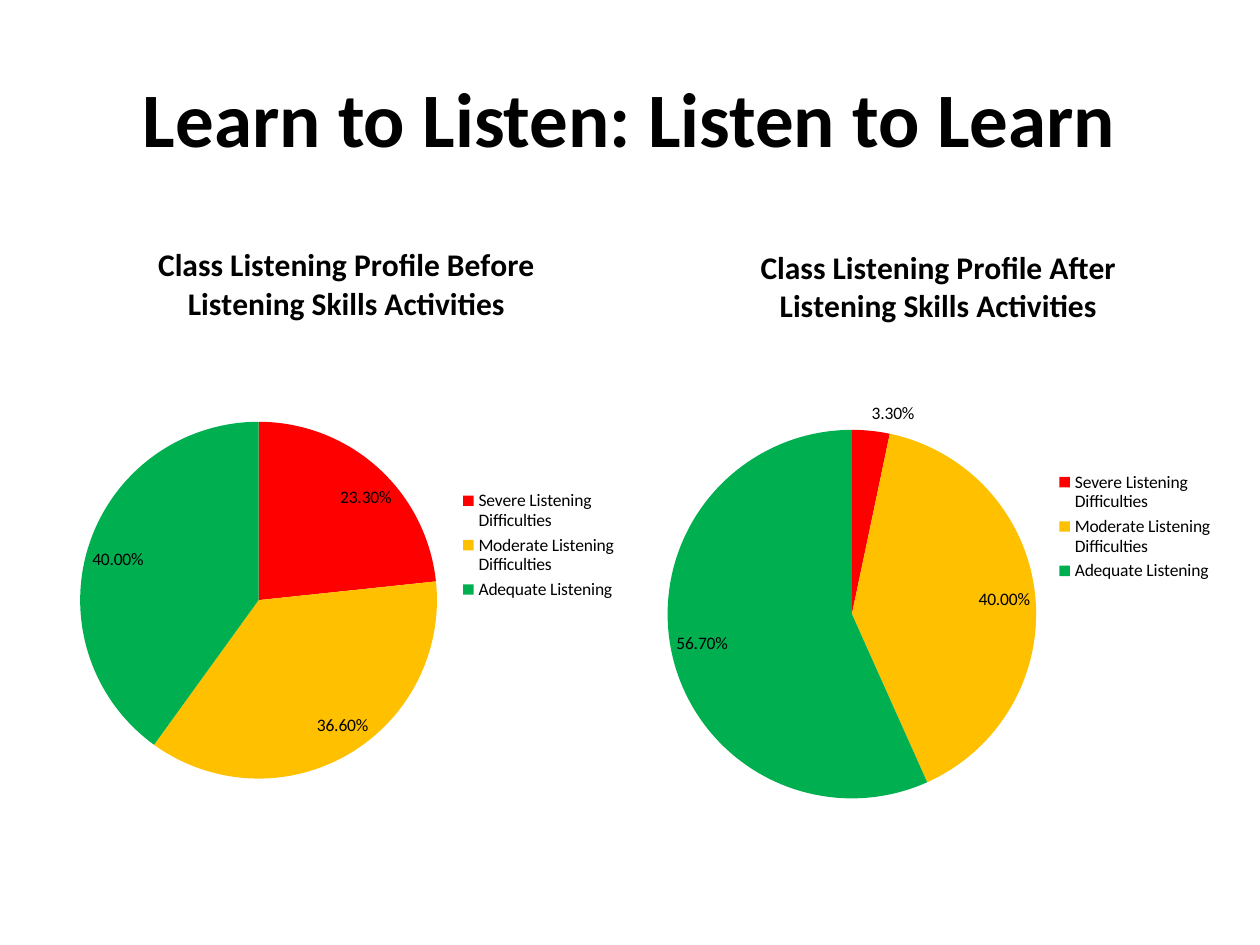
from lxml import etree
from pptx import Presentation
from pptx.chart.data import CategoryChartData
from pptx.dml.color import RGBColor
from pptx.enum.chart import XL_CHART_TYPE, XL_LABEL_POSITION, XL_LEGEND_POSITION
from pptx.enum.text import MSO_ANCHOR, PP_ALIGN
from pptx.oxml import parse_xml
from pptx.oxml.ns import nsdecls, qn
from pptx.util import Cm, Pt

PIE = XL_CHART_TYPE.PIE
BEST_FIT = XL_LABEL_POSITION.BEST_FIT
RIGHT = XL_LEGEND_POSITION.RIGHT
CENTER = PP_ALIGN.CENTER
MIDDLE = MSO_ANCHOR.MIDDLE

BLACK = RGBColor(0x00, 0x00, 0x00)
RED = RGBColor(0xFF, 0x00, 0x00)
AMBER = RGBColor(0xFF, 0xC0, 0x00)
GREEN = RGBColor(0x00, 0xB0, 0x50)
FONT = "Calibri"

# Content
TITLE = "Learn to Listen: Listen to Learn"
LEVELS = [
    ("Severe Listening Difficulties", RED),
    ("Moderate Listening Difficulties", AMBER),
    ("Adequate Listening", GREEN),
]
# box: left, top, width, height in cm; pie: x, y, w, h as shares of the box
PROFILES = [
    {"title": ["Class Listening Profile Before", "Listening Skills Activities"],
     "values": (0.233, 0.366, 0.4),
     "box": (1.27, 4.45, 11.43, 13.08), "pie": (0.03, 0.31, 0.63, 0.55)},
    {"title": ["Class Listening Profile After", "Listening Skills Activities"],
     "values": (0.033, 0.4, 0.567),
     "box": (13.11, 4.52, 11.61, 12.19), "pie": (0.03, 0.34, 0.64, 0.61)},
]


def style(font, size, bold):
    font.name = FONT
    font.size = Pt(size)
    font.bold = bold
    font.color.rgb = BLACK


def place_pie(chart, shares):
    """Fix the inner plot area at the given shares of the chart."""
    plot_area = chart.element.find(".//" + qn("c:plotArea"))
    for old in plot_area.findall(qn("c:layout")):
        plot_area.remove(old)
    layout = parse_xml(f"<c:layout {nsdecls('c')}><c:manualLayout/></c:layout>")
    settings = [("layoutTarget", "inner"), ("xMode", "edge"), ("yMode", "edge")]
    settings += zip("xywh", shares)
    for tag, value in settings:
        etree.SubElement(layout[0], qn("c:" + tag)).set("val", str(value))
    plot_area.insert(0, layout)


def add_profile(slide, profile):
    data = CategoryChartData(number_format="0.00%")
    data.categories = [name for name, _ in LEVELS]
    data.add_series("Series 1", profile["values"])
    box = [Cm(v) for v in profile["box"]]
    chart = slide.shapes.add_chart(PIE, *box, data).chart
    style(chart.font, 10, False)

    # Chart title
    tf = chart.chart_title.text_frame
    tf.text = "\n".join(profile["title"])
    for p in tf.paragraphs:
        for r in p.runs:
            style(r.font, 18, True)
    chart.chart_title.include_in_layout = False

    # Legend
    chart.has_legend = True
    chart.legend.position = RIGHT
    chart.legend.include_in_layout = False

    # Slices and labels
    plot = chart.plots[0]
    plot.vary_by_categories = True
    for i, (_, color) in enumerate(LEVELS):
        fill = plot.series[0].points[i].format.fill
        fill.solid()
        fill.fore_color.rgb = color
    plot.has_data_labels = True
    labels = plot.data_labels
    labels.show_value = True
    labels.show_percentage = False
    labels.number_format = "0.00%"
    labels.number_format_is_linked = False
    labels.position = BEST_FIT
    place_pie(chart, profile["pie"])


def main():
    prs = Presentation()
    prs.slide_width, prs.slide_height = Cm(25.4), Cm(19.05)
    slide = prs.slides.add_slide(prs.slide_layouts[5])

    # Slide title
    title = slide.shapes.title
    title.left, title.top = Cm(1.27), Cm(0.76)
    title.width, title.height = Cm(22.86), Cm(3.18)
    tf = title.text_frame
    tf.text = TITLE
    tf.vertical_anchor = MIDDLE
    p = tf.paragraphs[0]
    p.alignment = CENTER
    style(p.runs[0].font, 44, True)

    # Pie charts
    for profile in PROFILES:
        add_profile(slide, profile)
    prs.save("out.pptx")


if __name__ == "__main__":
    main()
